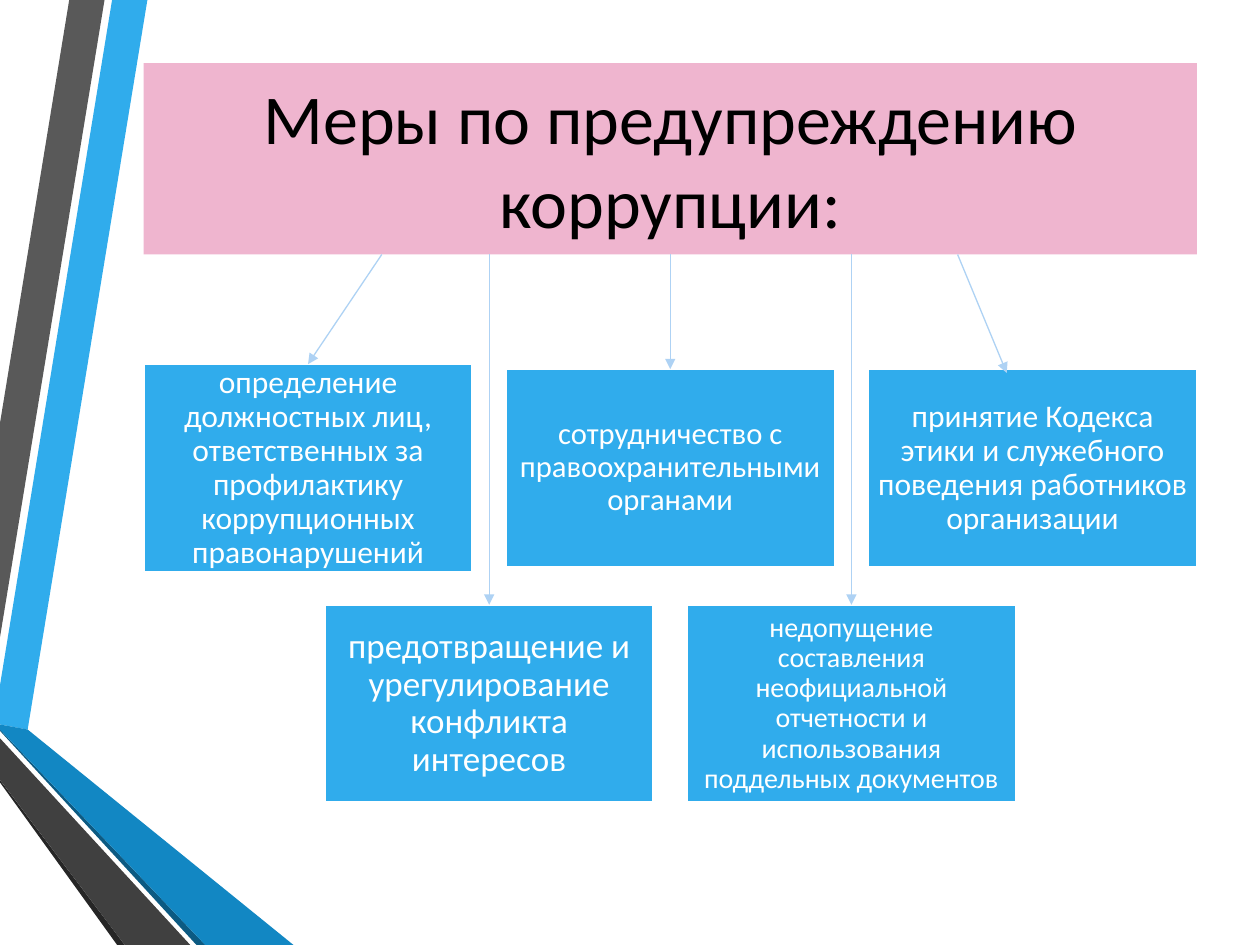
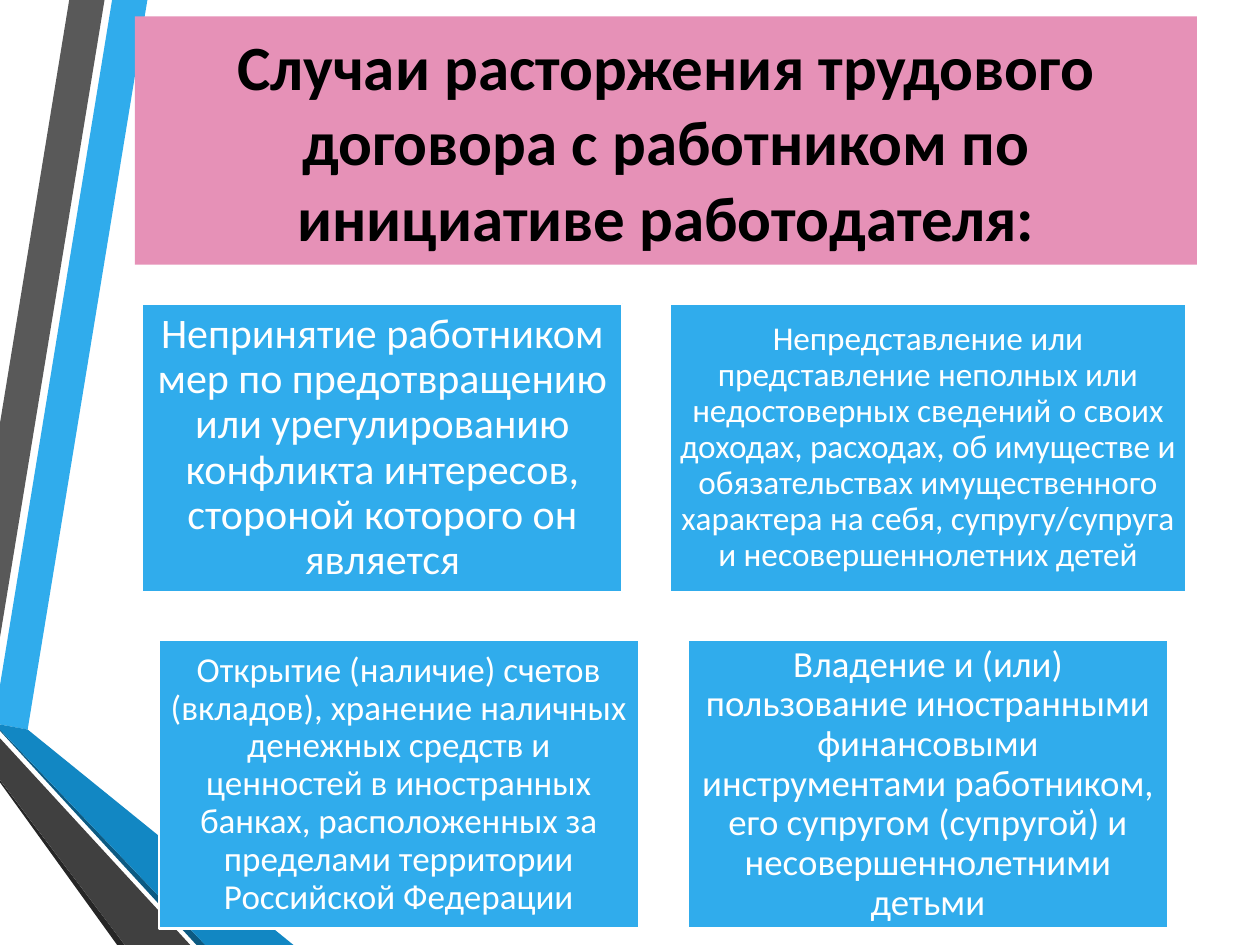
import pptx
import pptx.util
import pptx.dml.color
import pptx.enum.shapes
import pptx.enum.text
import pptx.oxml.ns
import lxml.etree

COLORS = {
    "blue": "30ACEC", "azure": "1287C3", "navy": "0C5A82",
    "gray": "595959", "dark": "404040", "coal": "262626",
    "pink": "EFB5CF", "rose": "E691B7", "arrow": "AED2F4",
    "white": "FFFFFF", "black": "000000",
}
FONT = "Calibri"
COLS, ROWS = 100, 75

BANDS = [
    ("blue", [(0, 54.4), (0, 57.5), (2.2, 57.9), (11.7, 0), (8.9, 0)]),
    ("gray", [(8.3, 0), (5.5, 0), (0, 33.6), (0, 50.6)]),
    ("coal", [(0, 61.9), (0, 62.1), (9.3, 75), (9.9, 75)]),
    ("navy", [(0, 57.9), (0, 58), (15.6, 75), (16.3, 75)]),
    ("azure", [(0, 57.9), (16.3, 75), (23.3, 75), (2.2, 57.9), (0, 57.5)]),
    ("dark", [(0, 61.9), (9.9, 75), (15.1, 75), (0, 58.6)]),
]


class Deck:
    """Holds the style and current slide; lengths are grid columns and rows."""

    def __init__(self):
        self.prs = pptx.Presentation()
        self.prs.slide_width = pptx.util.Inches(10)
        self.prs.slide_height = pptx.util.Inches(7.5)
        self.layout = self.prs.slide_layouts[5]
        self.s = None

    def x(self, cols):
        return round(self.prs.slide_width * cols / COLS)

    def y(self, rows):
        return round(self.prs.slide_height * rows / ROWS)

    def color(self, name):
        return pptx.dml.color.RGBColor.from_string(COLORS[name])

    def paint(self, sp, fill, line=None):
        sp.fill.solid()
        sp.fill.fore_color.rgb = self.color(fill)
        if line:
            sp.line.color.rgb = self.color(line)
            sp.line.width = pptx.util.Pt(1.25)
        else:
            sp.line.fill.background()

    def text(self, sp, text, size, color, bold=False):
        tf = sp.text_frame
        tf.word_wrap = True
        tf.auto_size = pptx.enum.text.MSO_AUTO_SIZE.NONE
        tf.vertical_anchor = pptx.enum.text.MSO_ANCHOR.MIDDLE
        p = tf.paragraphs[0]
        p.alignment = pptx.enum.text.PP_ALIGN.CENTER
        r = p.add_run()
        r.text = text
        r.font.name = FONT
        r.font.size = pptx.util.Pt(size)
        r.font.bold = bold
        r.font.color.rgb = self.color(color)
        return tf

    def slide(self):
        self.s = self.prs.slides.add_slide(self.layout)

    def band(self, color, points):
        """Draw one ribbon and move it to the shared layout."""
        pts = [(self.x(c), self.y(r)) for c, r in points]
        fb = self.s.shapes.build_freeform(*pts[0])
        fb.add_line_segments(pts[1:], close=True)
        sp = fb.convert_to_shape()
        sp.shadow.inherit = False
        self.paint(sp, color)
        self.layout.shapes.element.append(sp.element)

    def title(self, text, left, top, width, height, fill, size, bold=False):
        sp = self.s.shapes.title
        sp.left, sp.top = self.x(left), self.y(top)
        sp.width, sp.height = self.x(width), self.y(height)
        self.paint(sp, fill)
        self.text(sp, text, size, "black", bold)
        return sp

    def box(self, text, left, top, width, height, size):
        sp = self.s.shapes.add_shape(
            pptx.enum.shapes.MSO_SHAPE.RECTANGLE,
            self.x(left), self.y(top), self.x(width), self.y(height))
        sp.shadow.inherit = False
        self.paint(sp, "blue", "white")
        tf = self.text(sp, text, size, "white")
        tf.paragraphs[0].line_spacing = 0.9
        inset = pptx.util.Pt(size * 0.29)
        tf.margin_left = tf.margin_right = inset
        tf.margin_top = tf.margin_bottom = inset
        return sp

    def arrow(self, start, end, source=None, target=None):
        sp = self.s.shapes.add_connector(
            pptx.enum.shapes.MSO_CONNECTOR.STRAIGHT,
            self.x(start[0]), self.y(start[1]), self.x(end[0]), self.y(end[1]))
        if source is not None:
            sp.begin_connect(source, 2)
        if target is not None:
            sp.end_connect(target, 0)
        sp.line.color.rgb = self.color("arrow")
        sp.line.width = pptx.util.Pt(0.75)
        qn = pptx.oxml.ns.qn
        lxml.etree.SubElement(sp.line._get_or_add_ln(), qn("a:tailEnd"), type="triangle")
        lxml.etree.SubElement(sp.element.spPr, qn("a:effectLst"))


def measures(deck):
    """Build the slide of preventive measures."""
    left, step, width, height = 11.4, 28.75, 26.1, 15.7
    bottom = 20.2
    title = deck.title("Меры по предупреждению коррупции:",
                       left, 5, 83.6, 15.2, "pink", 40)
    officers = deck.box(
        "определение должностных лиц, ответственных за профилактику "
        "коррупционных правонарушений", left, 28.9, width, 16.5, 18)
    police = deck.box("сотрудничество с правоохранительными органами",
                      left + step, 29.3, width, height, 17.5)
    deck.box("принятие Кодекса этики и служебного поведения работников организации",
             left + 2 * step, 29.3, width, height, 18)
    lower = [
        ("предотвращение и урегулирование конфликта интересов", 20),
        ("недопущение составления неофициальной отчетности и "
         "использования поддельных документов", 16),
    ]
    lower_boxes = [deck.box(text, left + (i + 0.5) * step, 48, width, height, size)
                   for i, (text, size) in enumerate(lower)]
    deck.arrow((30.3, bottom), (24.8, 28.8), target=officers)
    deck.arrow((53.2, bottom), (53.2, 29.3), title, police)
    deck.arrow((76, bottom), (79.9, 29.6))
    for i, sp in enumerate(lower_boxes):
        middle = left + (i + 0.5) * step + width / 2
        deck.arrow((middle, bottom), (middle, 48), target=sp)


def dismissals(deck):
    """Build the slide of grounds for dismissal."""
    deck.title("Случаи расторжения трудового договора с работником "
               "по инициативе работодателя:",
               10.7, 1.3, 84.3, 19.7, "rose", 36, True)
    upper, lower, width, height = 24.1, 50.8, 38.1, 22.9
    cases = [
        ("Непринятие работником мер по предотвращению или урегулированию "
         "конфликта интересов, стороной которого он является",
         11.3, upper, width, 24),
        ("Непредставление или представление неполных или недостоверных "
         "сведений о своих доходах, расходах, об имуществе и обязательствах "
         "имущественного характера на себя, супругу/супруга и "
         "несовершеннолетних детей", 53.2, upper, 40.9, 19),
        ("Открытие (наличие) счетов (вкладов), хранение наличных денежных "
         "средств и ценностей в иностранных банках, расположенных за "
         "пределами территории Российской Федерации",
         12.6, lower, width, 20),
        ("Владение и (или) пользование иностранными финансовыми "
         "инструментами работником, его супругом (супругой) и "
         "несовершеннолетними детьми", 54.6, lower, width, 21),
    ]
    for text, left, top, w, size in cases:
        deck.box(text, left, top, w, height, size)


def main():
    deck = Deck()
    deck.slide()
    for color, points in BANDS:
        deck.band(color, points)
    measures(deck)
    deck.slide()
    dismissals(deck)
    deck.prs.save("out.pptx")


if __name__ == "__main__":
    main()
